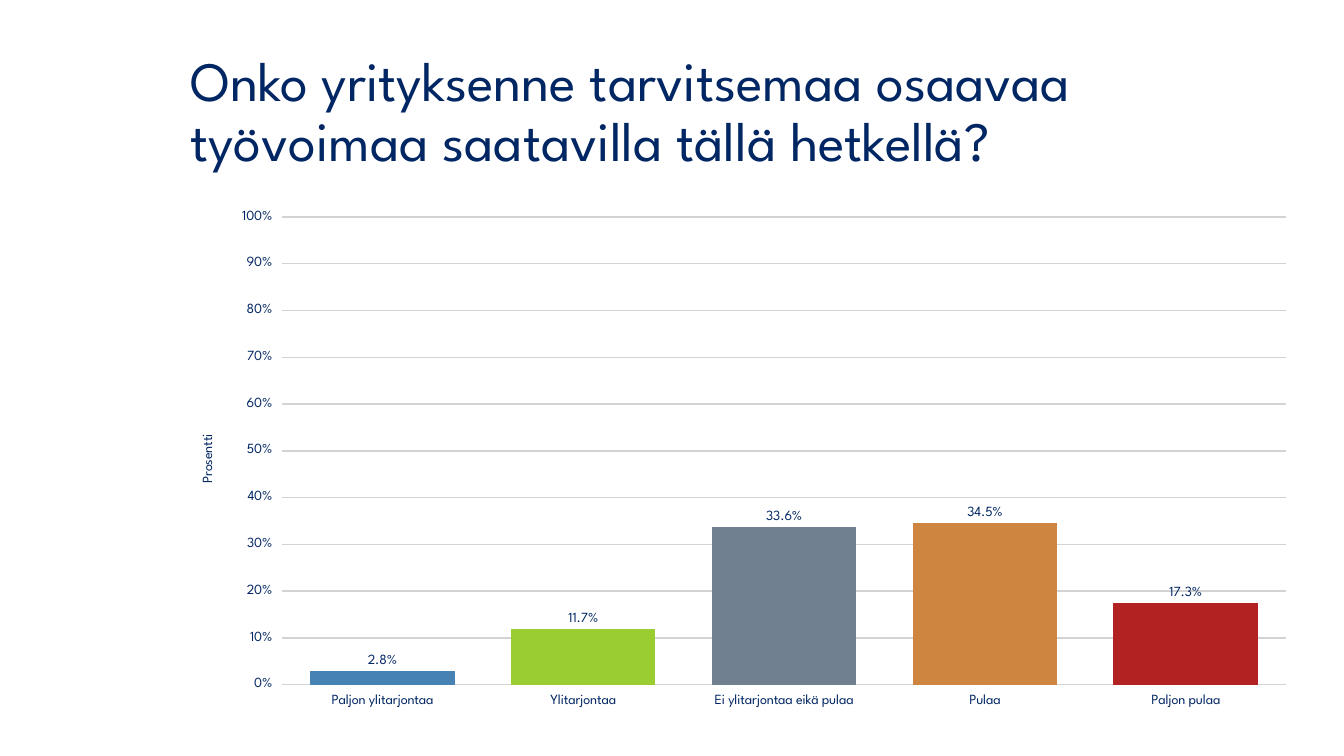
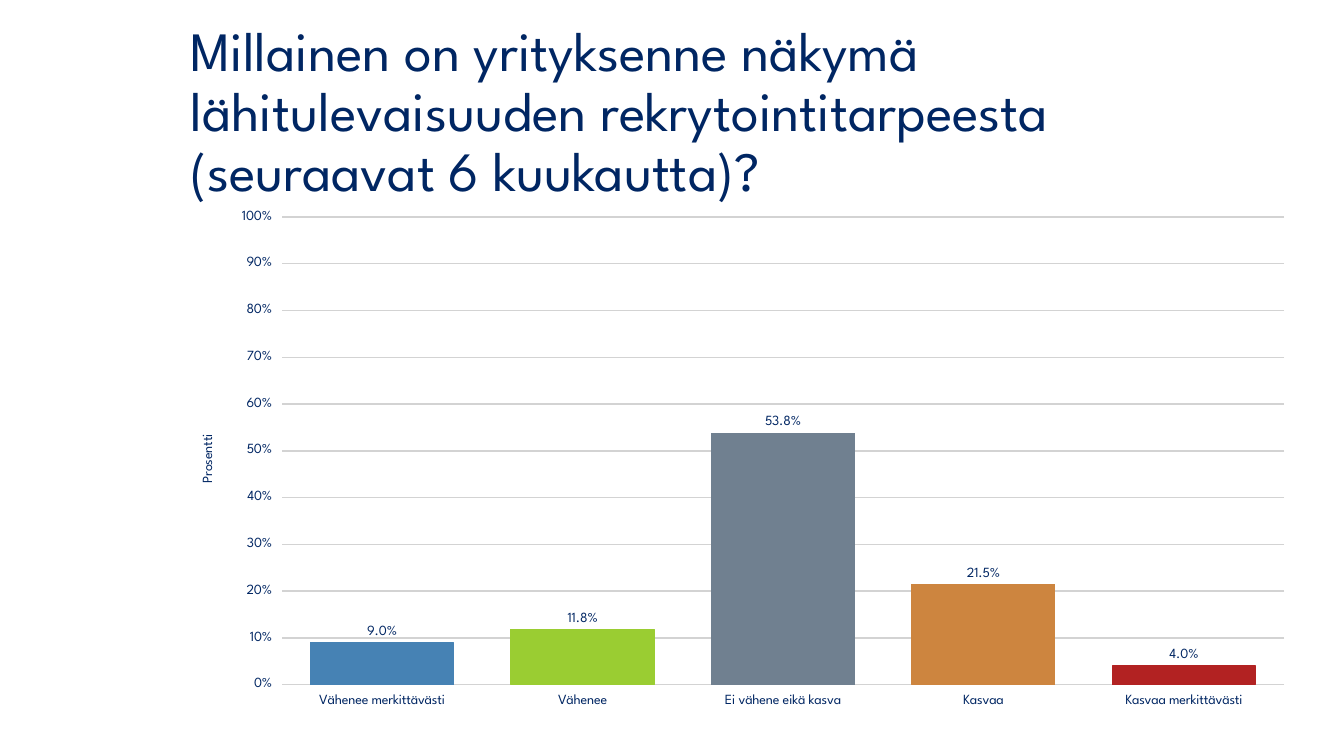
from collections import namedtuple

from lxml import etree
from pptx import Presentation
from pptx.chart.data import CategoryChartData
from pptx.dml.color import RGBColor
from pptx.enum.chart import XL_CHART_TYPE as ChartType
from pptx.enum.chart import XL_LABEL_POSITION as LabelPosition
from pptx.enum.chart import XL_TICK_MARK as TickMark
from pptx.enum.text import MSO_ANCHOR as Anchor
from pptx.oxml import parse_xml
from pptx.oxml.ns import nsdecls
from pptx.util import Inches, Pt

Theme = namedtuple("Theme", "font ink grid bars title_size chart_size label_size")
theme = Theme(
    font="League Spartan",
    ink=RGBColor.from_string("002663"),
    grid=RGBColor.from_string("D3D3D3"),
    bars=[RGBColor.from_string(code) for code in
          ("4682B4", "9ACD32", "708090", "CD853F", "B22222")],
    title_size=Pt(39.6),
    chart_size=Pt(18),
    label_size=Pt(10),
)

Question = namedtuple("Question", "title chart_width answers shares")
questions = [
    Question(
        "Onko yrityksenne tarvitsemaa osaavaa työvoimaa saatavilla tällä hetkellä?",
        11.19,
        ["Paljon ylitarjontaa", "Ylitarjontaa", "Ei ylitarjontaa eikä pulaa",
         "Pulaa", "Paljon pulaa"],
        [0.028, 0.117, 0.336, 0.345, 0.173],
    ),
    Question(
        "Millainen on yrityksenne näkymä lähitulevaisuuden rekrytointitarpeesta "
        "(seuraavat 6 kuukautta)?",
        11.17,
        ["Vähenee merkittävästi", "Vähenee", "Ei vähene eikä kasva",
         "Kasvaa", "Kasvaa merkittävästi"],
        [0.09, 0.118, 0.538, 0.215, 0.04],
    ),
]


def style_font(font, size):
    font.name = theme.font
    font.size = size
    font.bold = False
    font.color.rgb = theme.ink


def place_plot(chart, **fractions):
    plot_area = chart.element.chart.plotArea
    for old in plot_area.findall("{*}layout"):
        plot_area.remove(old)
    layout = parse_xml(f"<c:layout {nsdecls('c')}><c:manualLayout/></c:layout>")
    settings = {"layoutTarget": "inner", "xMode": "edge", "yMode": "edge", **fractions}
    namespace = etree.QName(layout).namespace
    for tag, value in settings.items():
        etree.SubElement(layout[0], f"{{{namespace}}}{tag}").set("val", str(value))
    plot_area.insert(0, layout)


deck = Presentation()
deck.slide_width, deck.slide_height = Inches(13.33), Inches(7.5)
blank = deck.slide_layouts[6]

for question in questions:
    slide = deck.slides.add_slide(blank)

    heading = slide.shapes.add_textbox(
        Inches(1.79), Inches(0.4), Inches(10.94), Inches(1.45)).text_frame
    heading.word_wrap = True
    heading.vertical_anchor = Anchor.MIDDLE
    heading.text = question.title
    heading.paragraphs[0].line_spacing = 0.9
    style_font(heading.paragraphs[0].runs[0].font, theme.title_size)

    answers = CategoryChartData(number_format="0.0%")
    answers.categories = question.answers
    answers.add_series("Series 1", question.shares)
    chart = slide.shapes.add_chart(
        ChartType.COLUMN_CLUSTERED, Inches(1.79), Inches(2),
        Inches(question.chart_width), Inches(5.1), answers).chart
    chart.has_legend = False
    chart.has_title = False
    style_font(chart.font, theme.chart_size)
    place_plot(chart, x=0.09, y=0.03, w=0.89, h=0.91)

    for axis in (chart.category_axis, chart.value_axis):
        axis.major_tick_mark = TickMark.OUTSIDE
        axis.format.line.fill.background()
        style_font(axis.tick_labels.font, theme.label_size)

    percent_axis = chart.value_axis
    percent_axis.minimum_scale, percent_axis.maximum_scale = 0, 1
    percent_axis.major_unit = 0.1
    percent_axis.tick_labels.number_format = "0%"
    percent_axis.tick_labels.number_format_is_linked = False
    percent_axis.major_gridlines.format.line.color.rgb = theme.grid
    percent_axis.major_gridlines.format.line.width = Pt(1)
    axis_name = percent_axis.axis_title.text_frame
    axis_name.text = "Prosentti"
    style_font(axis_name.paragraphs[0].runs[0].font, theme.label_size)

    columns = chart.plots[0]
    columns.gap_width = 40
    columns.vary_by_categories = False
    columns.has_data_labels = True
    labels = columns.data_labels
    labels.show_value = True
    labels.number_format = "0.0%"
    labels.number_format_is_linked = False
    labels.position = LabelPosition.OUTSIDE_END
    style_font(labels.font, theme.label_size)

    shares = columns.series[0]
    bars = [shares.points[index] for index in range(len(theme.bars))]
    for bar, color in zip([shares, *bars], [theme.bars[0], *theme.bars]):
        bar.format.fill.solid()
        bar.format.fill.fore_color.rgb = color
        bar.format.line.color.rgb = color
        bar.format.line.width = Pt(0.75)

deck.save("out.pptx")
